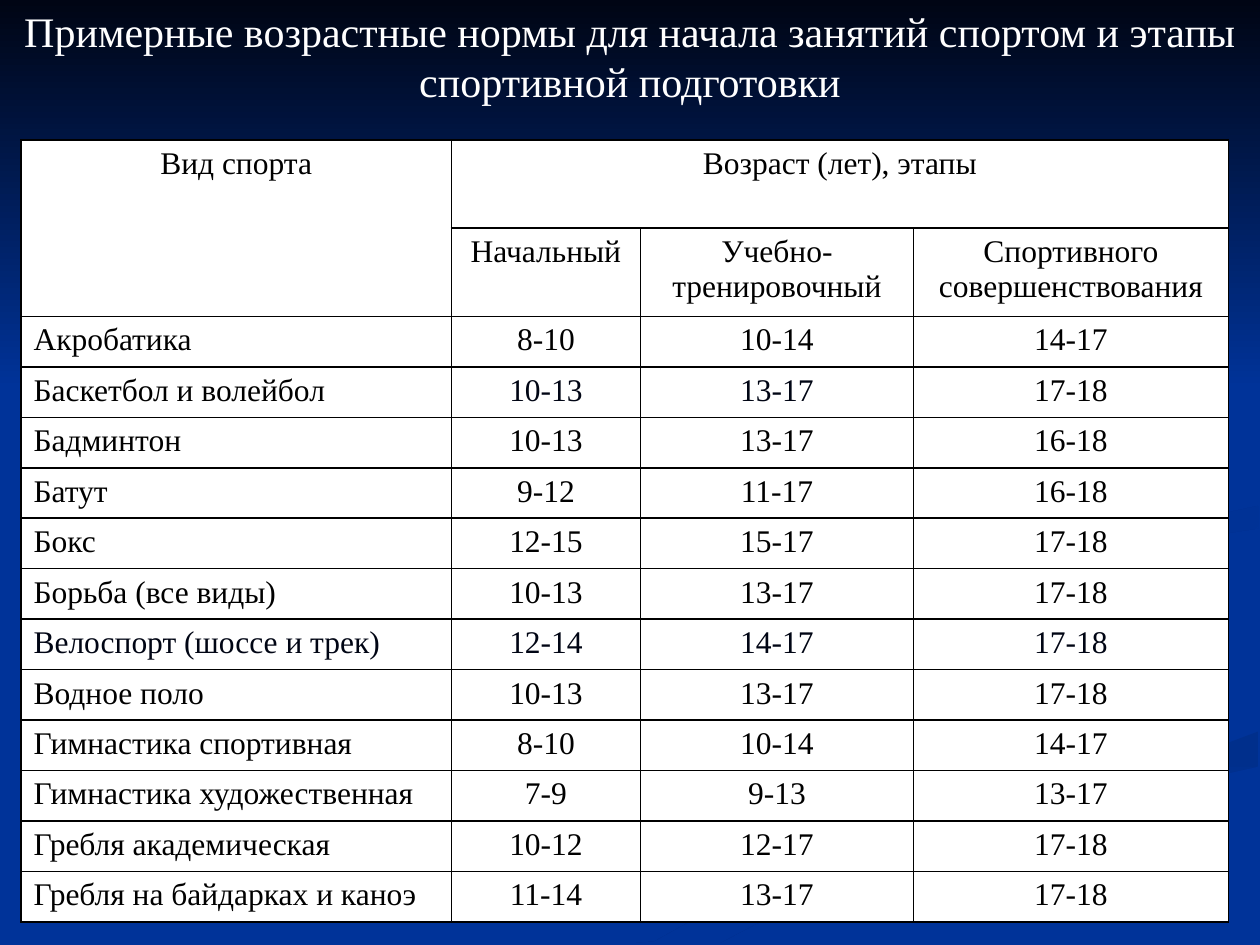
from pptx import Presentation
from pptx.dml.color import RGBColor
from pptx.enum.text import MSO_ANCHOR as Anchor, PP_ALIGN as Align
from pptx.oxml import parse_xml
from pptx.oxml.ns import nsdecls
from pptx.util import Pt

FONT = "Times New Roman"
BLUE, NIGHT, BLACK, WHITE = "003399", "000514", "000000", "FFFFFF"
TITLE = "Примерные возрастные нормы для начала занятий спортом и этапы спортивной подготовки"
HEADINGS = [
    ["Вид спорта", "Возраст (лет), этапы", "", ""],
    ["", "Начальный", "Учебно-тренировочный", "Спортивного совершенствования"],
]
SPORTS = [
    ["Акробатика", "8-10", "10-14", "14-17"],
    ["Баскетбол и волейбол", "10-13", "13-17", "17-18"],
    ["Бадминтон", "10-13", "13-17", "16-18"],
    ["Батут", "9-12", "11-17", "16-18"],
    ["Бокс", "12-15", "15-17", "17-18"],
    ["Борьба (все виды)", "10-13", "13-17", "17-18"],
    ["Велоспорт (шоссе и трек)", "12-14", "14-17", "17-18"],
    ["Водное поло", "10-13", "13-17", "17-18"],
    ["Гимнастика спортивная", "8-10", "10-14", "14-17"],
    ["Гимнастика художественная", "7-9", "9-13", "13-17"],
    ["Гребля академическая", "10-12", "12-17", "17-18"],
    ["Гребля на байдарках и каноэ", "11-14", "13-17", "17-18"],
]
NAVY_CELLS = {(3, 1), (3, 2), (8, 0), (8, 1), (8, 2), (8, 3)}
COLUMN_WIDTHS = [246, 108, 156, 180]
ROW_HEIGHTS = [50.4] * len(HEADINGS) + [28.8] * len(SPORTS)

LONG_RIBBON = [
    (562, 398), (536, 387), (491, 374), (451, 361), (428, 349), (415, 338), (414, 331),
    (410, 338), (415, 346), (433, 356), (471, 369), (514, 382), (549, 394), (564, 402),
    (566, 408), (557, 420), (532, 430), (492, 441), (444, 453), (388, 467), (330, 485),
    (271, 509), (216, 539), (260, 539), (310, 514), (359, 495), (406, 479), (449, 466),
    (487, 456), (533, 445), (562, 436), (573, 426), (575, 413), (566, 400),
]
LOWER_RIBBON = [
    (374, 538), (362, 539), (411, 539), (432, 528), (454, 518), (482, 505), (520, 491),
    (565, 476), (620, 461), (683, 446), (719, 438), (719, 418), (703, 424), (674, 433),
    (624, 446), (574, 459), (501, 482), (454, 499), (410, 518),
]
UPPER_RIBBON = [
    (562, 331), (563, 338), (574, 348), (595, 357), (582, 348), (580, 340), (588, 330),
    (607, 323), (632, 316), (674, 309), (719, 302), (719, 289), (696, 294), (647, 301),
    (611, 307), (583, 315), (570, 322),
]
SKY = [(0, 0), (0, 222), (720, 222), (720, 0)]


def color(hex_code):
    """Turn a hex string into a colour."""
    return RGBColor.from_string(hex_code)


def apply(target, **values):
    """Set each given attribute on the target."""
    for name, value in values.items():
        setattr(target, name, value)


def write(frame, wording, size, hex_code, align):
    """Put one formatted paragraph into a text frame."""
    paragraph = frame.paragraphs[0]
    paragraph.alignment = align
    run = paragraph.add_run()
    run.text = wording
    apply(run.font, name=FONT, size=Pt(size))
    run.font.color.rgb = color(hex_code)


def add_band(slide, outline, start, end, angle):
    """Draw a closed outline with a two-colour gradient turned clockwise."""
    builder = slide.shapes.build_freeform(*outline[0], scale=Pt(1))
    builder.add_line_segments(outline[1:], close=True)
    band = builder.convert_to_shape()
    band.shadow.inherit = False
    band.line.fill.background()
    band.fill.gradient()
    band.fill.gradient_angle = (360 - angle) % 360
    for stop, hex_code in zip(band.fill.gradient_stops, (start, end)):
        stop.color.rgb = color(hex_code)


def add_title(slide):
    """Add the heading across the top."""
    frame = slide.shapes.add_textbox(Pt(0), Pt(-1.5), Pt(720), Pt(87)).text_frame
    apply(frame, word_wrap=True, vertical_anchor=Anchor.MIDDLE, margin_bottom=Pt(24))
    write(frame, TITLE, 24, WHITE, Align.CENTER)


def add_borders(cell):
    """Rule all four sides of a cell in black."""
    properties = cell._tc.get_or_add_tcPr()
    for side in "LRTB":
        properties.append(parse_xml(
            f'<a:ln{side} {nsdecls("a")} w="{Pt(1)}"><a:solidFill>'
            f'<a:srgbClr val="{BLACK}"/></a:solidFill></a:ln{side}>'))


def add_age_table(slide):
    """Add the table of ages by sport and training stage."""
    rows = HEADINGS + SPORTS
    ages = slide.shapes.add_table(
        len(rows), len(COLUMN_WIDTHS), Pt(12), Pt(80),
        Pt(sum(COLUMN_WIDTHS)), Pt(sum(ROW_HEIGHTS))).table
    apply(ages, first_row=False, horz_banding=False)
    for column, width in zip(ages.columns, COLUMN_WIDTHS):
        column.width = Pt(width)
    for r, (entries, height) in enumerate(zip(rows, ROW_HEIGHTS)):
        ages.rows[r].height = Pt(height)
        for c, entry in enumerate(entries):
            cell = ages.cell(r, c)
            add_borders(cell)
            cell.fill.solid()
            cell.fill.fore_color.rgb = color(WHITE)
            if entry:
                is_sport = c == 0 and r >= len(HEADINGS)
                write(cell.text_frame, entry, 18,
                      NIGHT if (r, c) in NAVY_CELLS else BLACK,
                      Align.LEFT if is_sport else Align.CENTER)
    ages.cell(0, 0).merge(ages.cell(1, 0))
    ages.cell(0, 1).merge(ages.cell(0, 3))


def main():
    """Build and save the slide."""
    deck = Presentation()
    apply(deck, slide_width=Pt(720), slide_height=Pt(540))
    slide = deck.slides.add_slide(deck.slide_layouts[6])
    slide.background.fill.solid()
    slide.background.fill.fore_color.rgb = color(BLUE)
    add_band(slide, LONG_RIBBON, BLUE, "003193", 0)
    add_band(slide, LOWER_RIBBON, "002F8C", BLUE, 90)
    add_band(slide, UPPER_RIBBON, "003091", BLUE, 45)
    add_band(slide, SKY, NIGHT, BLUE, 90)
    add_title(slide)
    add_age_table(slide)
    deck.save("out.pptx")


if __name__ == "__main__":
    main()
